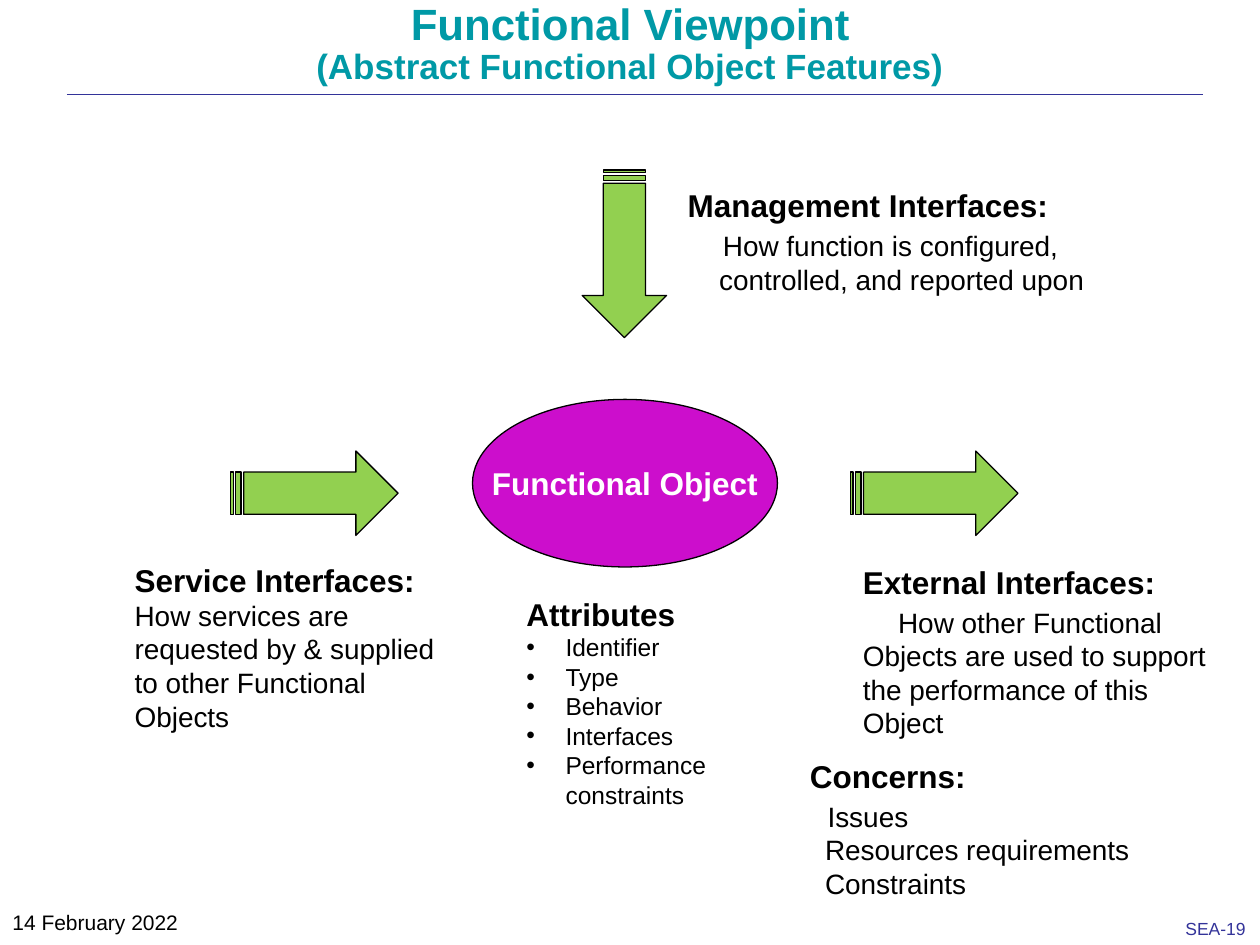
"""Build the Functional Viewpoint slide."""
from lxml import etree
from pptx import Presentation
from pptx.dml.color import RGBColor
from pptx.enum.shapes import MSO_CONNECTOR, MSO_SHAPE
from pptx.enum.text import MSO_ANCHOR, MSO_AUTO_SIZE, PP_ALIGN
from pptx.oxml.ns import qn
from pptx.util import Inches, Pt

ARROW, OVAL = MSO_SHAPE.STRIPED_RIGHT_ARROW, MSO_SHAPE.OVAL
CENTER, LEFT = PP_ALIGN.CENTER, PP_ALIGN.LEFT
MIDDLE = MSO_ANCHOR.MIDDLE
FIT = MSO_AUTO_SIZE.SHAPE_TO_FIT_TEXT
STRAIGHT = MSO_CONNECTOR.STRAIGHT

THEME = {
    "font": "Arial",
    "title": "0099A6", "ink": "000000", "navy": "333399", "white": "FFFFFF",
    "oval": "CC0ECC", "arrow": "92D050",
    "big": 25, "sub": 20, "head": 18, "body": 16, "item": 14, "date": 12, "page": 10,
}

TITLE = [("Functional Viewpoint", "big"), ("(Abstract Functional Object Features)", "sub")]
FEATURES = ["Identifier", "Type", "Behavior", "Interfaces", "Performance constraints"]
BLOCKS = [
    ((6.75, 4.42, 3.13, 1.5), "External Interfaces:", [
        (0, 0.28, "How other Functional Objects are used to support the performance of this Object")]),
    ((5.36, 1.43, 4.07, 1.01), "Management Interfaces:", [
        (0.28, 0, "How function is configured,"),
        (0.25, 0, "controlled, and reported upon")]),
    ((0.97, 4.4, 2.78, 1.48), "Service Interfaces:", [
        (0, 0, "How services are"),
        (0, 0, "requested by & supplied"),
        (0, 0, "to other Functional Objects")]),
    ((6.33, 5.96, 3.3, 1.31), "Concerns:", [
        (0.14, 0, "Issues"),
        (0.12, 0, "Resources requirements"),
        (0.12, 0, "Constraints")]),
]
ARROWS = [(4.29, 1.68, 90), (1.83, 3.58, 0), (6.75, 3.58, 0)]


def color(name):
    return RGBColor.from_string(THEME[name])


def add_box(slide, place):
    frame = slide.shapes.add_textbox(*map(Inches, place)).text_frame
    frame.word_wrap = True
    return frame


def add_line(frame, text, size, ink="ink", bold=False, align=LEFT):
    first = frame.paragraphs[0]
    para = frame.add_paragraph() if first.runs else first
    para.text = text
    para.alignment = align
    font = para.runs[0].font
    font.name, font.size, font.bold = THEME["font"], Pt(THEME[size]), bold
    font.color.rgb = color(ink)
    return para


def set_indent(para, left, first):
    props = para._p.get_or_add_pPr()
    props.set("marL", str(Inches(left)))
    props.set("indent", str(Inches(first)))
    return props


def add_shape(slide, kind, place, fill):
    shape = slide.shapes.add_shape(kind, *map(Inches, place))
    shape.shadow.inherit = False
    shape.fill.solid()
    shape.fill.fore_color.rgb = color(fill)
    shape.line.color.rgb = color("ink")
    shape.line.width = Pt(0.75)
    return shape


def add_rule(slide):
    rule = slide.shapes.add_connector(STRAIGHT, *map(Inches, (0.53, 0.75, 9.55, 0.75)))
    rule.line.color.rgb = color("navy")
    rule.line.width = Pt(0.13)
    etree.SubElement(rule._element.spPr, qn("a:effectLst"))


def add_labels(slide):
    page = add_box(slide, (9.31, 7.24, 0.68, 0.26))
    page.word_wrap, page.auto_size = False, FIT
    add_line(page, "SEA-19", "page", "navy")
    add_line(add_box(slide, (0, 7.17, 2.08, 0.33)), "14 February 2022", "date")
    title = add_box(slide, (1.29, -0.03, 7.42, 0.48))
    for text, size in TITLE:
        add_line(title, text, size, "title", True, CENTER).line_spacing = 0.9


def add_blocks(slide):
    for place, head, lines in BLOCKS:
        frame = add_box(slide, place)
        add_line(frame, head, "head", bold=True)
        for left, first, text in lines:
            para = add_line(frame, text, "body")
            set_indent(para, left, first)
            if (left, first, text) == lines[0] and left + first:
                para.space_before = Pt(2.5)


def add_features(slide):
    frame = add_box(slide, (4.08, 4.67, 2.42, 1.82))
    add_line(frame, "Attributes", "head", bold=True)
    for text in FEATURES:
        props = set_indent(add_line(frame, text, "item"), 0.31, -0.31)
        etree.SubElement(props, qn("a:buFont")).set("typeface", THEME["font"])
        etree.SubElement(props, qn("a:buChar")).set("char", "•")


def main():
    deck = Presentation()
    deck.slide_width, deck.slide_height = Inches(10), Inches(7.5)
    slide = deck.slides.add_slide(deck.slide_layouts[6])
    add_rule(slide)
    add_labels(slide)
    frame = add_shape(slide, OVAL, (3.75, 3.17, 2.42, 1.33), "oval").text_frame
    frame.word_wrap, frame.vertical_anchor = False, MIDDLE
    add_line(frame, "Functional Object", "head", "white", True, CENTER)
    add_features(slide)
    add_blocks(slide)
    for left, top, turn in ARROWS:
        add_shape(slide, ARROW, (left, top, 1.33, 0.67), "arrow").rotation = turn
    deck.save("out.pptx")


if __name__ == "__main__":
    main()
